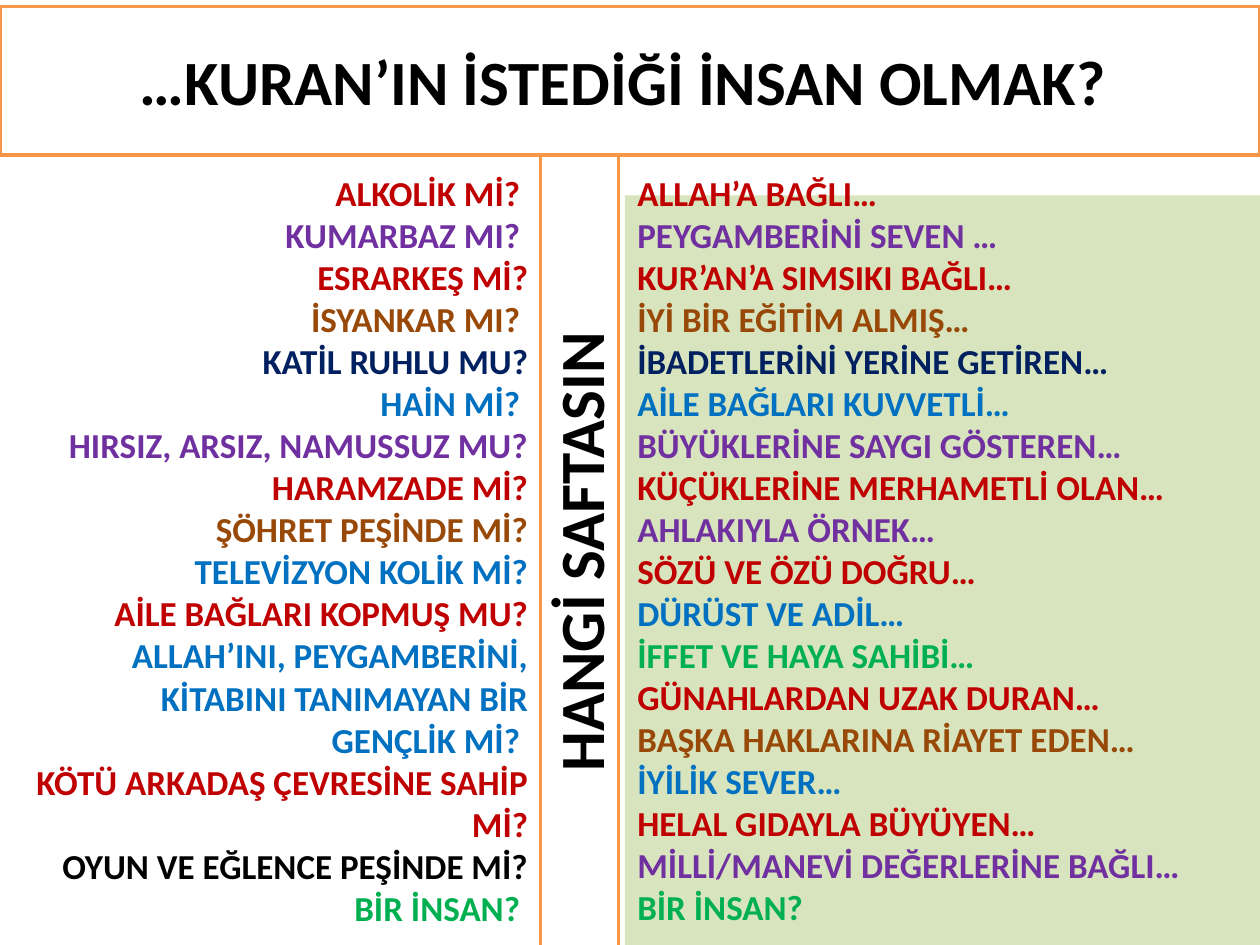
from pptx import Presentation
from pptx import util as u
from pptx.dml.color import RGBColor
from pptx.enum import shapes, text

RED, PURPLE, BROWN, NAVY = "C00000", "7030A0", "984807", "002060"
BLUE, GREEN, BLACK, WHITE = "0070C0", "00B050", "000000", "FFFFFF"
ORANGE, PALE_GREEN = "F79646", "D7E4BD"

TITLE = [("…KURAN’IN İSTEDİĞİ İNSAN OLMAK? ", BLACK)]
QUESTION = [("HANGİ SAFTASIN", BLACK)]
BAD_TRAITS = [
    ("ALKOLİK Mİ? ", RED),
    ("KUMARBAZ MI? ", PURPLE),
    ("ESRARKEŞ Mİ?", RED),
    ("İSYANKAR MI? ", BROWN),
    ("KATİL RUHLU MU?", NAVY),
    ("HAİN Mİ? ", BLUE),
    ("HIRSIZ, ARSIZ, NAMUSSUZ MU?", PURPLE),
    ("HARAMZADE Mİ?", RED),
    ("ŞÖHRET PEŞİNDE Mİ?", BROWN),
    ("TELEVİZYON KOLİK Mİ?", BLUE),
    ("AİLE BAĞLARI KOPMUŞ MU?", RED),
    ("ALLAH’INI, PEYGAMBERİNİ, KİTABINI TANIMAYAN BİR GENÇLİK Mİ? ", BLUE),
    ("KÖTÜ ARKADAŞ ÇEVRESİNE SAHİP Mİ?", RED),
    ("OYUN VE EĞLENCE PEŞİNDE Mİ?", BLACK),
    ("BİR İNSAN? ", GREEN),
]
GOOD_TRAITS = [
    ("ALLAH’A BAĞLI…", RED),
    ("PEYGAMBERİNİ SEVEN …", PURPLE),
    ("KUR’AN’A SIMSIKI BAĞLI…", RED),
    ("İYİ BİR EĞİTİM ALMIŞ…", BROWN),
    ("İBADETLERİNİ YERİNE GETİREN…", NAVY),
    ("AİLE BAĞLARI KUVVETLİ…", BLUE),
    ("BÜYÜKLERİNE SAYGI GÖSTEREN…", PURPLE),
    ("KÜÇÜKLERİNE MERHAMETLİ OLAN…", RED),
    ("AHLAKIYLA ÖRNEK…", PURPLE),
    ("SÖZÜ VE ÖZÜ DOĞRU…", RED),
    ("DÜRÜST VE ADİL…", BLUE),
    ("İFFET VE HAYA SAHİBİ…", GREEN),
    ("GÜNAHLARDAN UZAK DURAN…", RED),
    ("BAŞKA HAKLARINA RİAYET EDEN…", BROWN),
    ("İYİLİK SEVER…", BLUE),
    ("HELAL GIDAYLA BÜYÜYEN…", RED),
    ("MİLLİ/MANEVİ DEĞERLERİNE BAĞLI…", PURPLE),
    ("BİR İNSAN?", GREEN),
]

WIDTH, HEIGHT = 10, 7.5
TITLE_TOP, TITLE_BOTTOM = 0.05, 1.23
BAND_LEFT, BAND_WIDTH, BAND_LENGTH = 4.29, 0.62, 6.3
BAND_MIDDLE = 4.38
GOOD_LEFT, GOOD_TOP, GOOD_WIDTH = 4.96, 1.55, 5.16
INDENT = 0.3
ALIGN = text.PP_ALIGN


def rgb(value):
    return RGBColor.from_string(value)


def write(shape, lines, size, align):
    frame = shape.text_frame
    frame.word_wrap = True
    frame.vertical_anchor = text.MSO_ANCHOR.MIDDLE
    for number, (line, color) in enumerate(lines):
        paragraph = frame.paragraphs[0] if number == 0 else frame.add_paragraph()
        paragraph.text = line
        paragraph.alignment = align
        properties = paragraph._p.get_or_add_pPr()
        properties.set("marL", str(u.Inches(INDENT)))
        properties.set("indent", str(-u.Inches(INDENT)))
        font = paragraph.font
        font.name, font.size, font.bold = "Calibri", u.Pt(size), True
        font.color.rgb = rgb(color)


def add_panel(slide, box, fill, border=None):
    panel = slide.shapes.add_shape(shapes.MSO_SHAPE.RECTANGLE, *map(u.Inches, box))
    panel.shadow.inherit = False
    panel.fill.solid()
    panel.fill.fore_color.rgb = rgb(fill)
    if border:
        panel.line.color.rgb = rgb(border)
        panel.line.width = u.Pt(2)
    else:
        panel.line.fill.background()
    return panel


def main():
    deck = Presentation()
    deck.slide_width, deck.slide_height = u.Inches(WIDTH), u.Inches(HEIGHT)
    slide = deck.slides.add_slide(deck.slide_layouts[6])

    title = add_panel(
        slide, (0, TITLE_TOP, WIDTH, TITLE_BOTTOM - TITLE_TOP), WHITE, ORANGE)
    write(title, TITLE, 36, ALIGN.CENTER)

    good = add_panel(
        slide, (GOOD_LEFT, GOOD_TOP, GOOD_WIDTH, HEIGHT - GOOD_TOP), PALE_GREEN)
    write(good, GOOD_TRAITS, 20, ALIGN.LEFT)
    good.text_frame.margin_bottom = u.Inches(0.38)  # lifts the list by half a line

    bad = slide.shapes.add_textbox(
        *map(u.Inches, (0, TITLE_BOTTOM, BAND_LEFT, HEIGHT - TITLE_BOTTOM)))
    write(bad, BAD_TRAITS, 20, ALIGN.RIGHT)

    # The band is laid out flat around its centre, then turned upright.
    band_center = BAND_LEFT + BAND_WIDTH / 2
    band = add_panel(
        slide,
        (band_center - BAND_LENGTH / 2, BAND_MIDDLE - BAND_WIDTH / 2,
         BAND_LENGTH, BAND_WIDTH),
        WHITE, ORANGE)
    band.rotation = 270
    write(band, QUESTION, 36, ALIGN.CENTER)

    deck.save("out.pptx")


if __name__ == "__main__":
    main()
